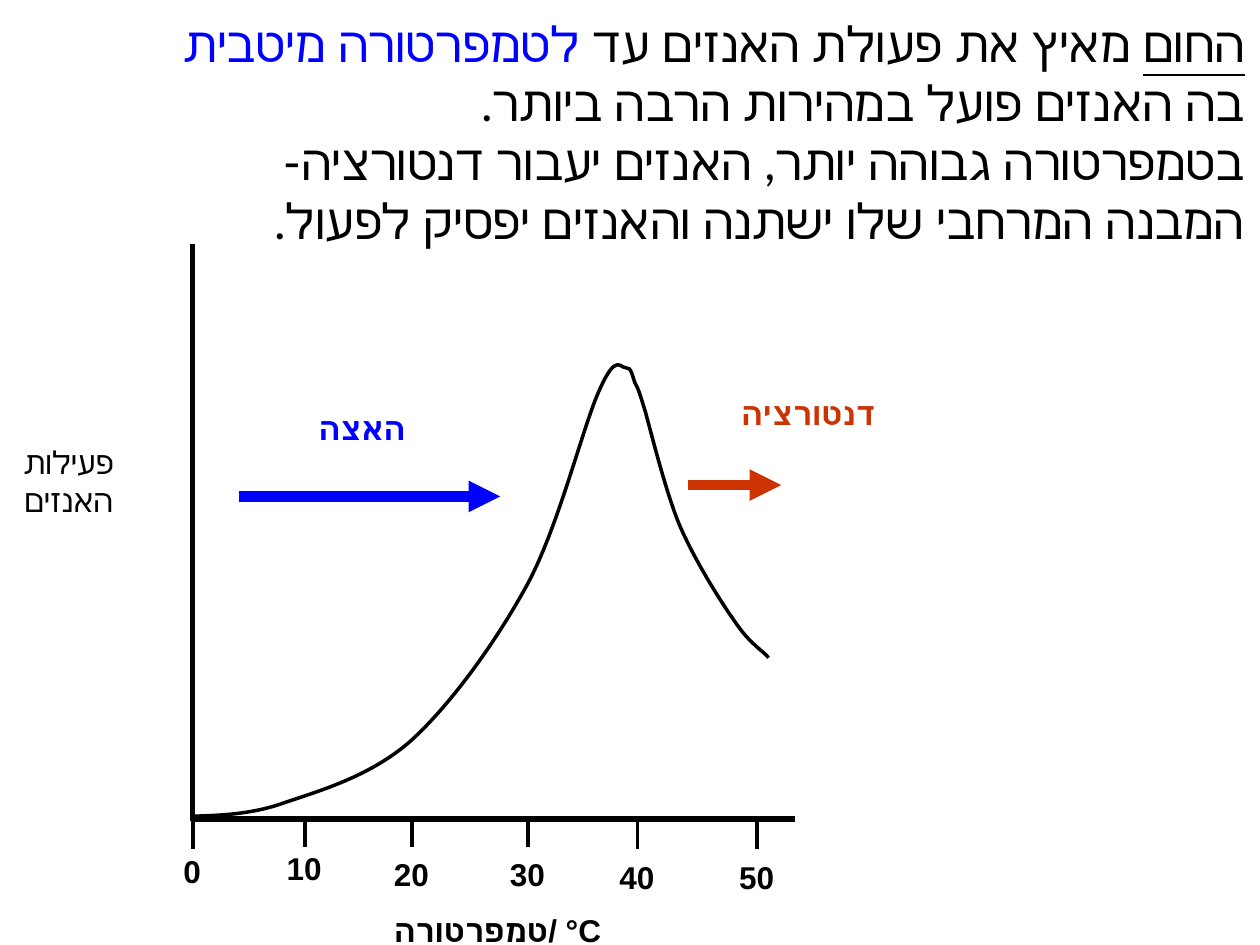
from lxml.etree import SubElement
from pptx import Presentation
from pptx.dml.color import RGBColor
from pptx.enum.shapes import MSO_CONNECTOR
from pptx.enum.text import MSO_AUTO_SIZE, PP_ALIGN
from pptx.oxml.ns import qn
from pptx.util import Inches, Pt

COLUMNS, ROWS = 1000, 750
WIDTH, HEIGHT = Inches(10), Inches(7.5)
BLACK, BLUE, RED = "000000", "0000FF", "CC3300"
HEBREW_FONT = "Lato"

HEADING = [
    [("החום", {"underline": True}),
     (" מאיץ את פעולת האנזים עד ", {}),
     ("לטמפרטורה מיטבית ", {"color": BLUE})],
    [("בה האנזים פועל במהירות הרבה ביותר. ", {})],
    [("בטמפרטורה גבוהה יותר, האנזים יעבור דנטורציה- ", {})],
    [("המבנה המרחבי שלו ישתנה והאנזים יפסיק לפעול. ", {})],
]
TICKS = [
    ("0", 153, 650, 671), ("10", 242, 649, 669), ("20", 327, 649, 674),
    ("30", 419, 649, 674), ("40", 506, 650, 676), ("50", 601, 650, 676),
]
CURVE_START = (152, 648)
CURVE_SEGMENTS = [
    [(164, 647), (194, 648), (223, 638)],
    [(252, 628), (293, 617), (326, 588)],
    [(358, 559), (394, 509), (419, 463)],
    [(444, 416), (463, 337), (476, 309)],
    [(489, 280), (492, 292), (497, 292)],
    [(501, 291), (502, 299), (504, 304)],
    [(507, 310), (506, 307), (512, 326)],
    [(517, 344), (528, 389), (539, 416)],
    [(551, 444), (571, 476), (583, 493)],
    [(595, 511), (605, 516), (610, 522)],
]


def color_of(hex_value):
    return RGBColor.from_string(hex_value)


def across(columns):
    return round(WIDTH * columns / COLUMNS)


def down(rows):
    return round(HEIGHT * rows / ROWS)


def place(left, top, width, height):
    return across(left), down(top), across(width), down(height)


def set_format(target, values):
    for name, value in values.items():
        setattr(target, name, value)


def add_run(paragraph, text, color=BLACK, **values):
    run = paragraph.add_run()
    run.text = text
    set_format(run.font, values)
    run.font.color.rgb = color_of(color)
    complex_font = SubElement(run.font._element, qn("a:cs"))
    complex_font.set("typeface", HEBREW_FONT)


def add_text(slide, box, paragraphs, right_to_left=False, frame_format=None, **base):
    frame = slide.shapes.add_textbox(*place(*box)).text_frame
    set_format(frame, frame_format or {"word_wrap": True})
    for index, runs in enumerate(paragraphs):
        paragraph = frame.add_paragraph() if index else frame.paragraphs[0]
        paragraph.alignment = PP_ALIGN.RIGHT if right_to_left else PP_ALIGN.CENTER
        if right_to_left:
            paragraph._p.get_or_add_pPr().set("rtl", "1")
        for text, changes in runs:
            add_run(paragraph, text, **{**base, **changes})


def add_line(slide, start, end, weight, color=BLACK, arrow=False):
    connector = slide.shapes.add_connector(
        MSO_CONNECTOR.STRAIGHT,
        across(start[0]), down(start[1]), across(end[0]), down(end[1]))
    connector.line.color.rgb = color_of(color)
    connector.line.width = Pt(weight)
    if arrow:
        SubElement(connector.line._get_or_add_ln(), qn("a:tailEnd")).set("type", "triangle")
    SubElement(connector._element.spPr, qn("a:effectLst"))


def add_curve(slide, start, segments, weight):
    builder = slide.shapes.build_freeform(*start, scale=WIDTH / COLUMNS)
    for segment in segments:
        builder.add_line_segments(segment, close=False)
    shape = builder.convert_to_shape()
    outline = next(shape._element.iter(qn("a:path")))
    lines = outline.findall(qn("a:lnTo"))
    for first in range(0, len(lines), 3):
        bezier = SubElement(outline, qn("a:cubicBezTo"))
        for line in lines[first:first + 3]:
            bezier.append(line[0])
            outline.remove(line)
    shape.shadow.inherit = False
    shape.fill.background()
    shape.line.color.rgb = color_of(BLACK)
    shape.line.width = Pt(weight)


def add_axes(slide):
    add_line(slide, (153, 194), (153, 652), 3)
    add_line(slide, (631, 650), (154, 650), 3)
    for label, column, tick_top, label_top in TICKS:
        add_line(slide, (column, tick_top), (column, tick_top + 23.5), 2)
        add_text(slide, (column - 29, label_top, 57, 58), [[(label, {})]],
                 size=Pt(18), name="Arial", bold=True)


def main():
    presentation = Presentation()
    presentation.slide_width, presentation.slide_height = WIDTH, HEIGHT
    slide = presentation.slides.add_slide(presentation.slide_layouts[6])
    label = {"size": Pt(18), "name": "Times New Roman"}
    bold_label = {**label, "bold": True}

    add_text(slide, (-32, 6, 1030, 229), HEADING, right_to_left=True,
             frame_format={"word_wrap": False, "auto_size": MSO_AUTO_SIZE.SHAPE_TO_FIT_TEXT},
             size=Pt(28), name="Lato")
    add_text(slide, (133, 718, 524, 52),
             [[("טמפרטורה", {}), ("/ °C", {"name": "Arial"})]], **bold_label)
    add_axes(slide)
    add_text(slide, (-20, 347, 149, 100), [[("פעילות", {})], [("האנזים", {})]], **label)
    add_curve(slide, CURVE_START, CURVE_SEGMENTS, 2)
    add_line(slide, (190, 394), (397, 394), 6, BLUE, arrow=True)
    add_line(slide, (546, 385), (620, 385), 6, RED, arrow=True)
    add_text(slide, (211, 320, 159, 68), [[("האצה ", {})]], color=BLUE, **bold_label)
    add_text(slide, (545, 308, 194, 68), [[("דנטורציה", {})]], color=RED, **bold_label)
    presentation.save("out.pptx")


if __name__ == "__main__":
    main()
